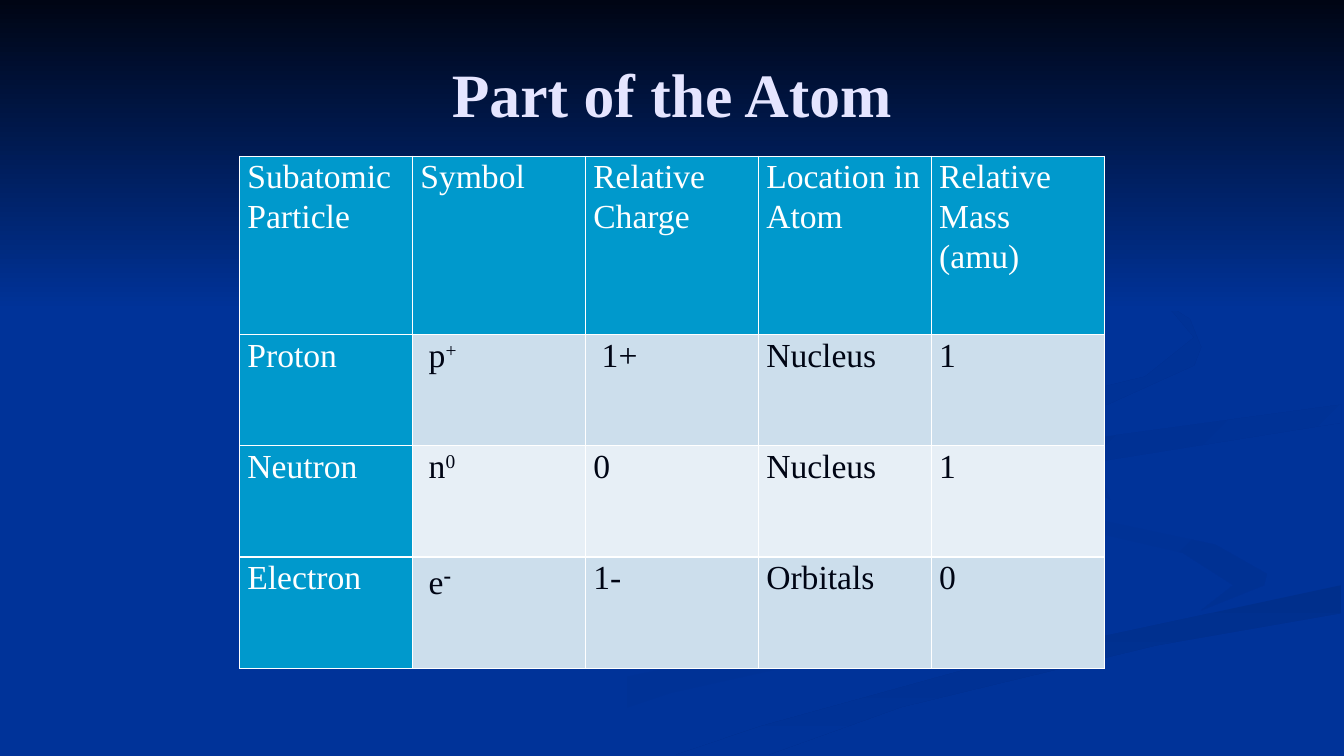
"""Build the slide on the parts of the atom."""
from lxml import etree
from pptx import Presentation, util as u
from pptx.dml.color import RGBColor
from pptx.enum import shapes, text
from pptx.oxml.ns import qn

COLORS = {
    "blue": "003399", "night": "000514", "lavender": "E5E5FF", "white": "FFFFFF",
    "cyan": "0099CC", "band": "CCDEEC", "light band": "E7EFF6",
    "loop": "003193", "ribbon": "002F8C", "wisp": "003091", "hook": "002F8E",
}
FONT = "Times New Roman"
TABLE_BOX = (171.36, 111.6, 617.76, 365.76)
HEADER_HEIGHT = 127.44
HEADERS = ["Subatomic Particle", "Symbol", "Relative Charge",
           "Location in Atom", "Relative Mass (amu)"]
PARTICLES = [
    ["Proton", (" p", "+", {}), " 1+", "Nucleus", "1"],
    ["Neutron", (" n", "0", {}), "0", "Nucleus", "1"],
    ["Electron", (" e", "-", {"size": u.Pt(28), "bold": True}), "1-", "Orbitals", "0"],
]
SWIRLS = [
    ("blue", "loop", 0, [(768, 418), (626, 446), (440, 485), (288, 539),
                         (347, 539), (479, 495), (672, 452)]),
    ("blue", "loop", 45, [(905, 410), (868, 389), (760, 366), (695, 334), (750, 373),
                          (845, 395), (881, 418), (858, 436), (903, 418)]),
    ("ribbon", "blue", 90, [(483, 539), (549, 539), (644, 505), (826, 461),
                            (958, 438), (958, 418), (734, 466), (546, 518)]),
    ("wisp", "blue", 45, [(750, 331), (793, 357), (783, 330), (958, 302),
                          (958, 289), (788, 312)]),
    ("hook", "blue", 45, [(656, 310), (791, 289), (853, 261), (858, 248), (850, 228),
                          (788, 188), (732, 168), (827, 210), (853, 241),
                          (818, 269), (554, 333), (597, 360)]),
]


def rgb(name):
    """Return the named colour."""
    return RGBColor.from_string(COLORS[name])


def apply(target, formats):
    """Set each attribute of the target from the format values."""
    for name, value in formats.items():
        setattr(target, name, value)


def paint(shape, start, end, angle):
    """Give a shape a clockwise linear gradient without line or shadow."""
    shape.shadow.inherit = False
    shape.line.fill.background()
    shape.fill.gradient()
    shape.fill.gradient_angle = -angle % 360
    for stop, name in zip(shape.fill.gradient_stops, (start, end)):
        stop.color.rgb = rgb(name)


def add_swirl(page, start, end, angle, points):
    """Draw one closed background outline."""
    builder = page.shapes.build_freeform(*points[0], scale=u.Pt(1))
    builder.add_line_segments(points[1:], close=True)
    paint(builder.convert_to_shape(), start, end, angle)


def add_sky(page):
    """Draw the dark gradient across the top."""
    sky = page.shapes.add_shape(shapes.MSO_SHAPE.RECTANGLE, 0, 0, u.Pt(960), u.Pt(222))
    paint(sky, "night", "blue", 90)


def add_span(para, words, color, size, formats=None):
    """Append a run of text and return it."""
    span = para.add_run()
    span.text = words
    apply(span.font, {"name": FONT, "size": u.Pt(size), "bold": False, **(formats or {})})
    span.font.color.rgb = rgb(color)
    return span


def add_title(page, words):
    """Add the centred title."""
    box = page.shapes.add_textbox(*map(u.Pt, (48, 21.6, 864, 90)))
    apply(box.text_frame, {"word_wrap": True,
                           "vertical_anchor": text.MSO_ANCHOR.MIDDLE})
    para = box.text_frame.paragraphs[0]
    para.alignment = text.PP_ALIGN.CENTER
    add_span(para, words, "lavender", 44, {"bold": True})


def add_borders(cell):
    """Draw thin white lines on all sides of a cell."""
    properties = cell._tc.get_or_add_tcPr()
    for side in "LRTB":
        line = etree.SubElement(properties, qn(f"a:ln{side}"), w=str(u.Pt(1)))
        fill = etree.SubElement(line, qn("a:solidFill"))
        etree.SubElement(fill, qn("a:srgbClr"), val=COLORS["white"])


def fill_cell(cell, content, fill, color):
    """Format a cell and write its words, with a superscript if given."""
    add_borders(cell)
    cell.fill.solid()
    cell.fill.fore_color.rgb = rgb(fill)
    apply(cell, {"margin_left": u.Pt(5.4), "margin_right": u.Pt(5.4),
                 "margin_top": 0, "margin_bottom": 0})
    para = cell.text_frame.paragraphs[0]
    para.line_spacing = 1.07
    if isinstance(content, str):
        add_span(para, content, color, 24)
        return
    symbol, charge, formats = content
    add_span(para, symbol, color, 24)
    span = add_span(para, charge, color, 24, formats)
    span._r.get_or_add_rPr().set("baseline", "30000")


def add_particle_table(page):
    """Add the table of subatomic particles."""
    rows = [HEADERS, *PARTICLES]
    frame = page.shapes.add_table(len(rows), len(HEADERS), *map(u.Pt, TABLE_BOX))
    table = frame.table
    body_height = (TABLE_BOX[3] - HEADER_HEIGHT) / len(PARTICLES)
    for column in table.columns:
        column.width = u.Pt(TABLE_BOX[2] / len(HEADERS))
    for i, row in enumerate(rows):
        table.rows[i].height = u.Pt(body_height if i else HEADER_HEIGHT)
        band = "band" if i % 2 else "light band"
        for j, content in enumerate(row):
            heading = i == 0 or j == 0
            fill, color = ("cyan", "white") if heading else (band, "night")
            fill_cell(table.cell(i, j), content, fill, color)


def main():
    """Build and save the deck."""
    deck = Presentation()
    apply(deck, {"slide_width": u.Pt(960), "slide_height": u.Pt(540)})
    page = deck.slides.add_slide(deck.slide_layouts[6])
    page.background.fill.solid()
    page.background.fill.fore_color.rgb = rgb("blue")
    for swirl in SWIRLS:
        add_swirl(page, *swirl)
    add_sky(page)
    add_title(page, "Part of the Atom")
    add_particle_table(page)
    deck.save("out.pptx")


if __name__ == "__main__":
    main()
